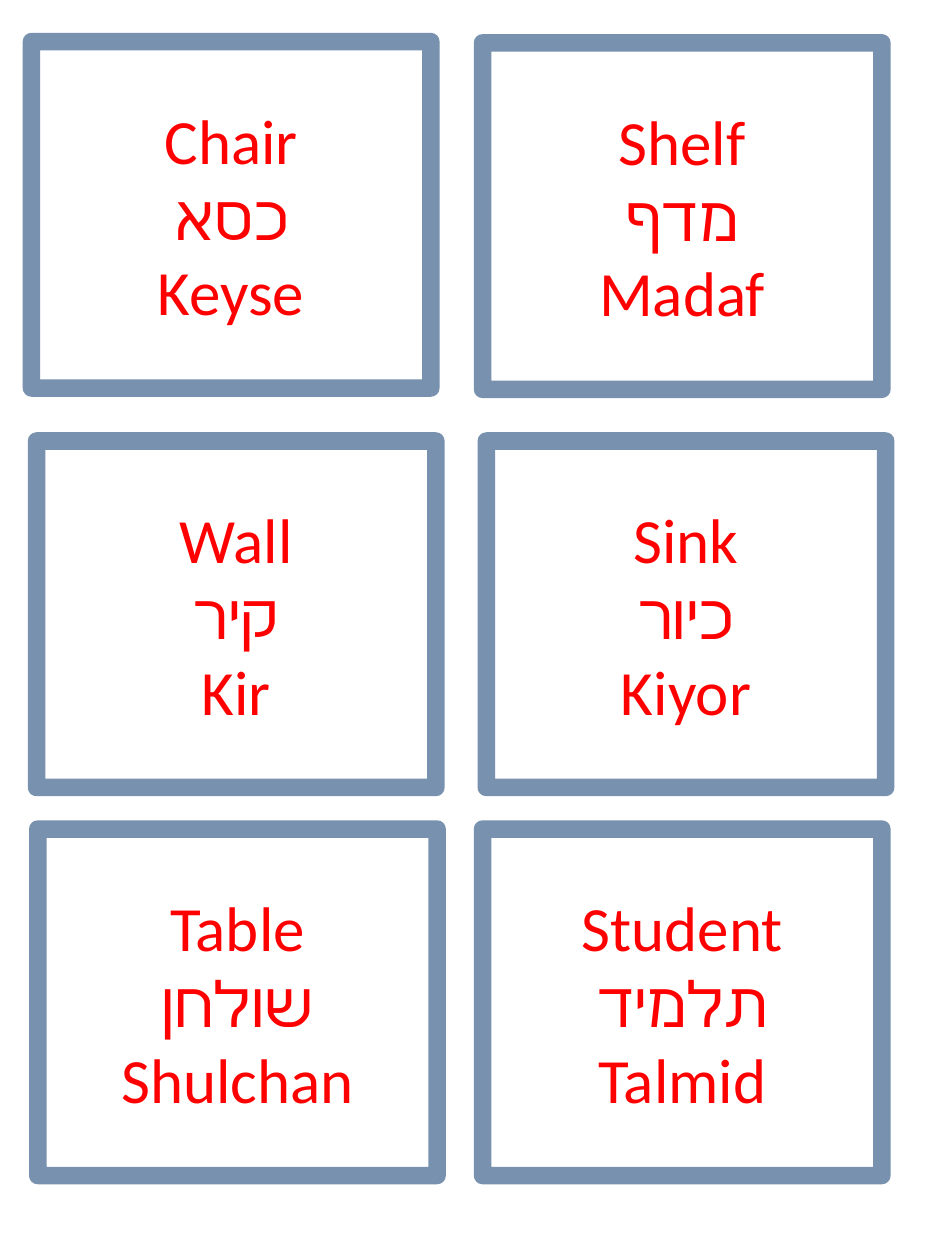
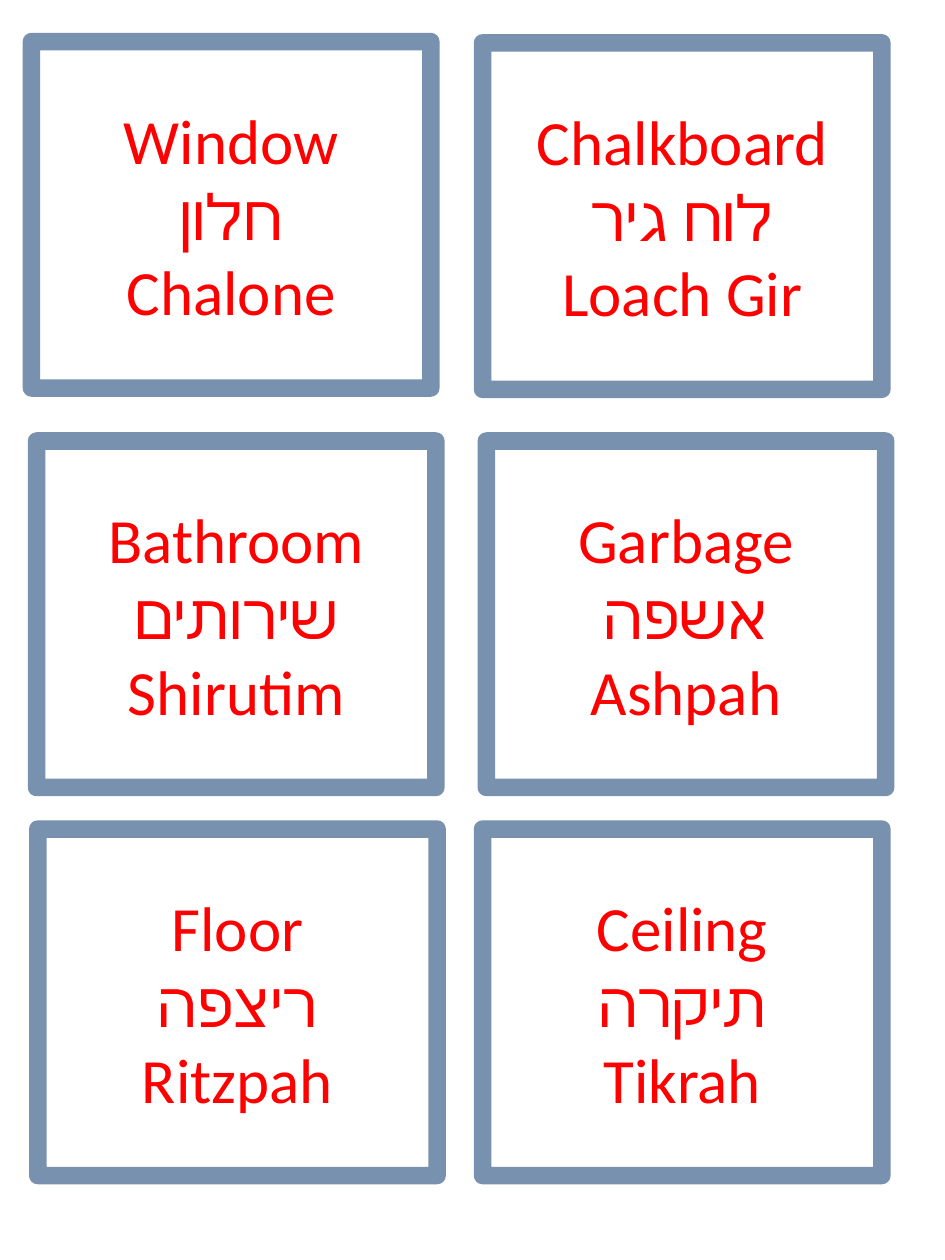
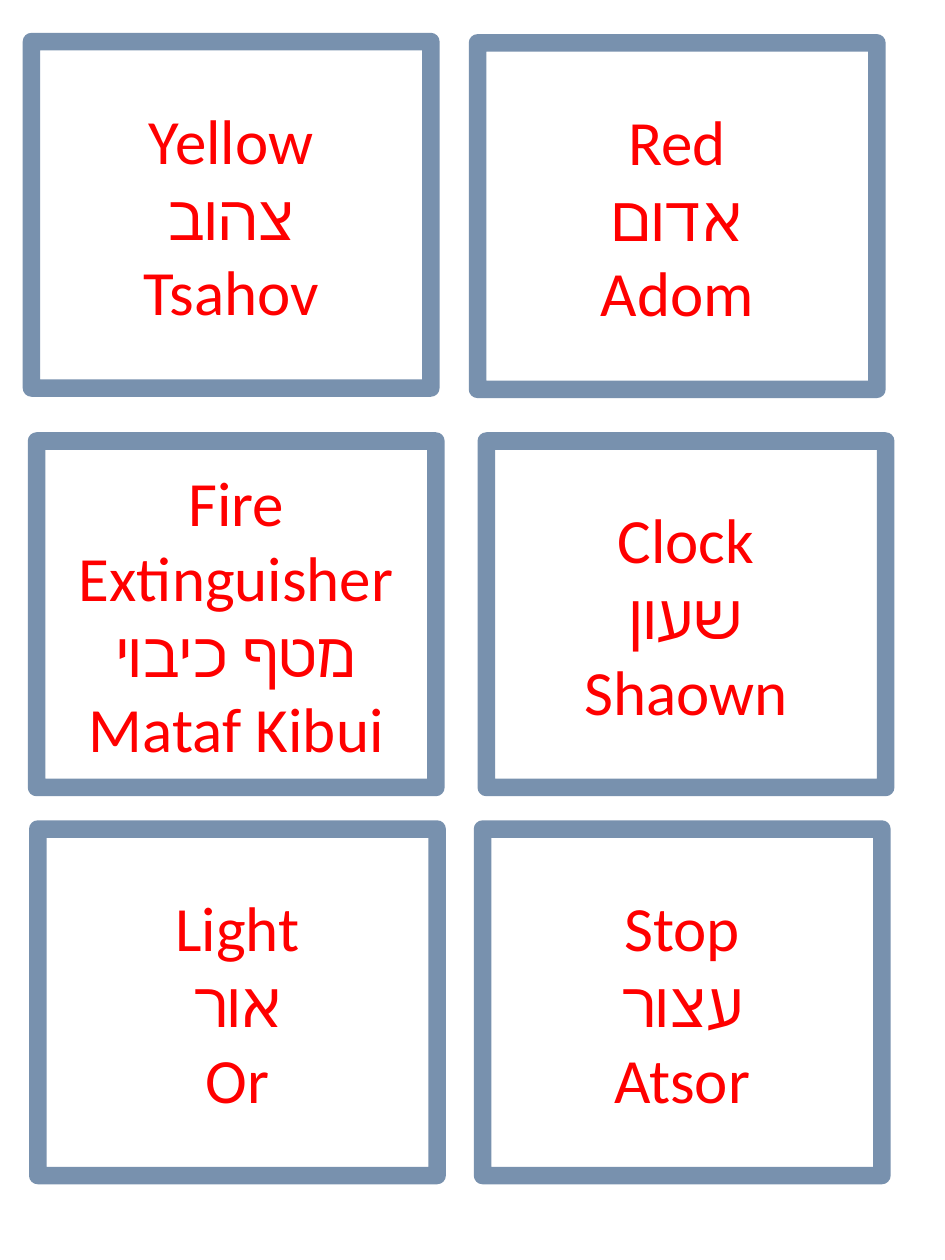
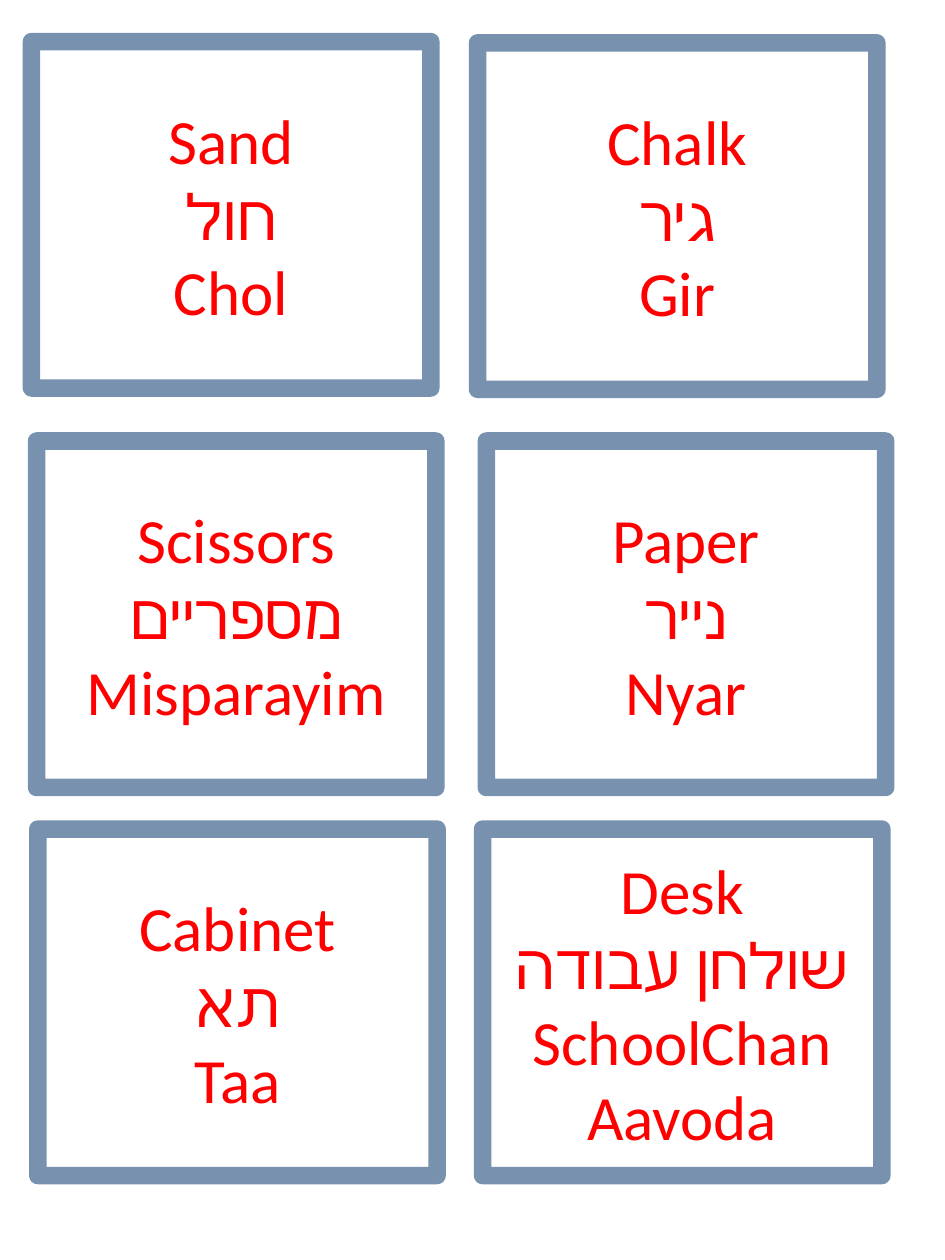
"""Build four pages of English and Hebrew classroom word cards."""
from dataclasses import dataclass
from typing import NamedTuple

import lxml.etree
import pptx
import pptx.dml.color
import pptx.enum.shapes
import pptx.enum.text
import pptx.oxml.ns
import pptx.presentation
import pptx.shapes.autoshape
import pptx.slide
import pptx.util

EMU_PER_PX = 9144


@dataclass(frozen=True)
class Theme:
    card_fill: str = "FFFFFF"
    border: str = "395E89"
    border_opacity: int = 68
    border_points: int = 10
    word: str = "FF0000"
    word_points: int = 36
    font: str = "Calibri"


class Place(NamedTuple):
    left: int
    top: int


class Card(NamedTuple):
    place: Place
    lines: tuple[str, ...]


THEME = Theme()
PAGE_WIDTH, PAGE_HEIGHT = 750, 1000
CARD_WIDTH, CARD_HEIGHT = 317, 275

OBJECT_PLACES = (
    Place(25, 33), Place(383, 34), Place(29, 350),
    Place(30, 658), Place(386, 350), Place(383, 658),
)
COLOUR_PLACES = (OBJECT_PLACES[0], Place(379, 34), *OBJECT_PLACES[2:])

PAGES = (
    (OBJECT_PLACES, (
        ("Chair", "כסא", "Keyse"),
        ("Shelf", "מדף", "Madaf"),
        ("Wall", "קיר", "Kir"),
        ("Table", "שולחן", "Shulchan"),
        ("Sink", "כיור", "Kiyor"),
        ("Student", "תלמיד", "Talmid"),
    )),
    (OBJECT_PLACES, (
        ("Window", "חלון", "Chalone"),
        ("Chalkboard", "לוח גיר", "Loach Gir"),
        ("Bathroom", "שירותים", "Shirutim"),
        ("Floor", "ריצפה", "Ritzpah"),
        ("Garbage", "אשפה", "Ashpah"),
        ("Ceiling", "תיקרה", "Tikrah"),
    )),
    (COLOUR_PLACES, (
        ("Yellow", "צהוב", "Tsahov"),
        ("Red", "אדום", "Adom"),
        ("Fire Extinguisher", "מטף כיבוי", "Mataf Kibui"),
        ("Light", "אור", "Or"),
        ("Clock", "שעון", "Shaown"),
        ("Stop", "עצור", "Atsor"),
    )),
    (COLOUR_PLACES, (
        ("Sand", "חול", "Chol"),
        ("Chalk", "גיר", "Gir"),
        ("Scissors", "מספריים", "Misparayim"),
        ("Cabinet", "תא", "Taa"),
        ("Paper", "נייר", "Nyar"),
        ("Desk", "שולחן עבודה", "SchoolChan", "Aavoda"),
    )),
)


def px(length: int) -> pptx.util.Emu:
    return pptx.util.Emu(length * EMU_PER_PX)


def rgb(value: str) -> pptx.dml.color.RGBColor:
    return pptx.dml.color.RGBColor.from_string(value)


def write_lines(box: pptx.shapes.autoshape.Shape, lines: tuple[str, ...], *,
                size: int = THEME.word_points, color: str = THEME.word,
                font: str = THEME.font) -> None:
    frame = box.text_frame
    frame.word_wrap = True
    frame.vertical_anchor = pptx.enum.text.MSO_ANCHOR.MIDDLE
    for index, line in enumerate(lines):
        para = frame.add_paragraph() if index else frame.paragraphs[0]
        para.alignment = pptx.enum.text.PP_ALIGN.CENTER
        span = para.add_run()
        span.text = line
        span.font.size = pptx.util.Pt(size)
        span.font.name = font
        span.font.color.rgb = rgb(color)


def style_border(box: pptx.shapes.autoshape.Shape) -> None:
    box.line.color.rgb = rgb(THEME.border)
    box.line.width = pptx.util.Pt(THEME.border_points)
    qualified = pptx.oxml.ns.qn
    line = box.element.spPr.find(qualified("a:ln"))
    color = next(line.iter(qualified("a:srgbClr")))
    lxml.etree.SubElement(color, qualified("a:alpha"),
                          val=str(THEME.border_opacity * 1000))
    lxml.etree.SubElement(line, qualified("a:round"))


def draw_card(page: pptx.slide.Slide, card: Card) -> None:
    box = page.shapes.add_shape(
        pptx.enum.shapes.MSO_SHAPE.RECTANGLE,
        px(card.place.left), px(card.place.top), px(CARD_WIDTH), px(CARD_HEIGHT))
    box.shadow.inherit = False
    box.fill.solid()
    box.fill.fore_color.rgb = rgb(THEME.card_fill)
    style_border(box)
    write_lines(box, card.lines)


def build_deck() -> pptx.presentation.Presentation:
    deck = pptx.Presentation()
    deck.slide_width, deck.slide_height = px(PAGE_WIDTH), px(PAGE_HEIGHT)
    for places, words in PAGES:
        page = deck.slides.add_slide(deck.slide_layouts[6])
        for card in map(Card, places, words):
            draw_card(page, card)
    return deck


if __name__ == "__main__":
    build_deck().save("out.pptx")
